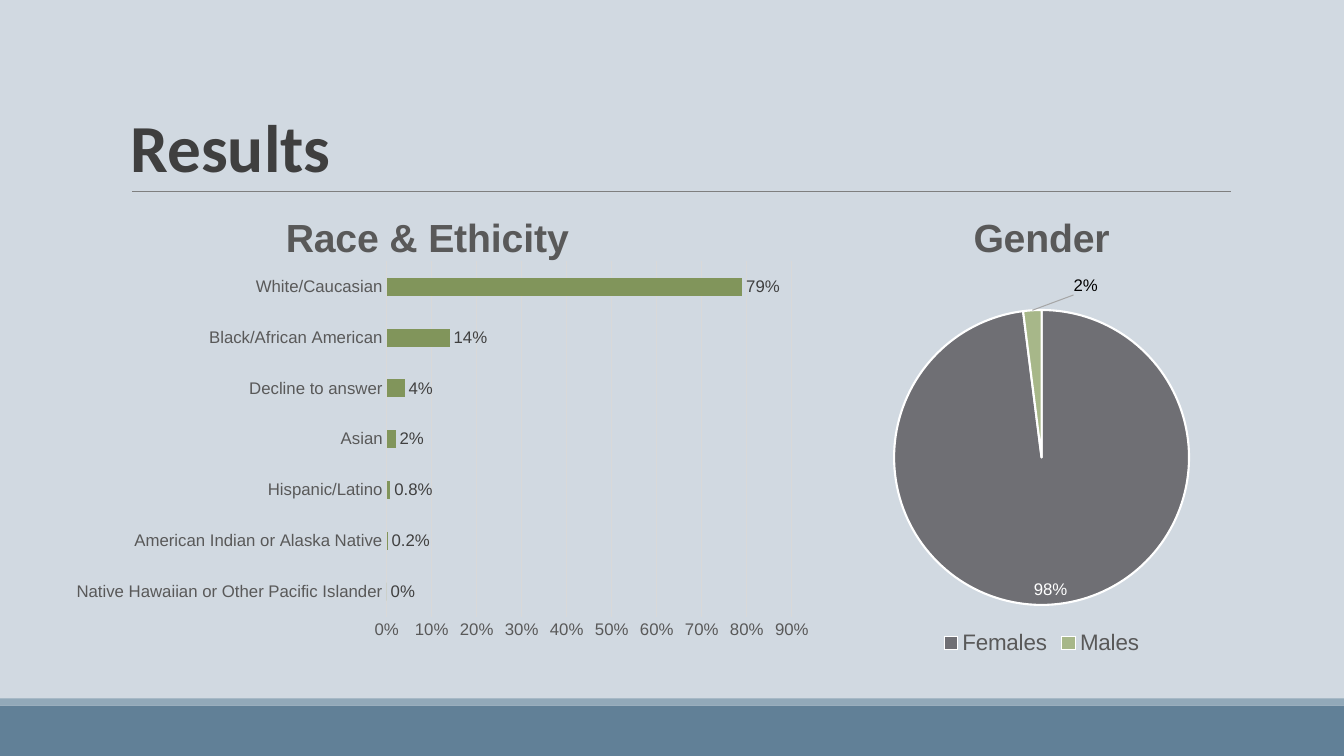
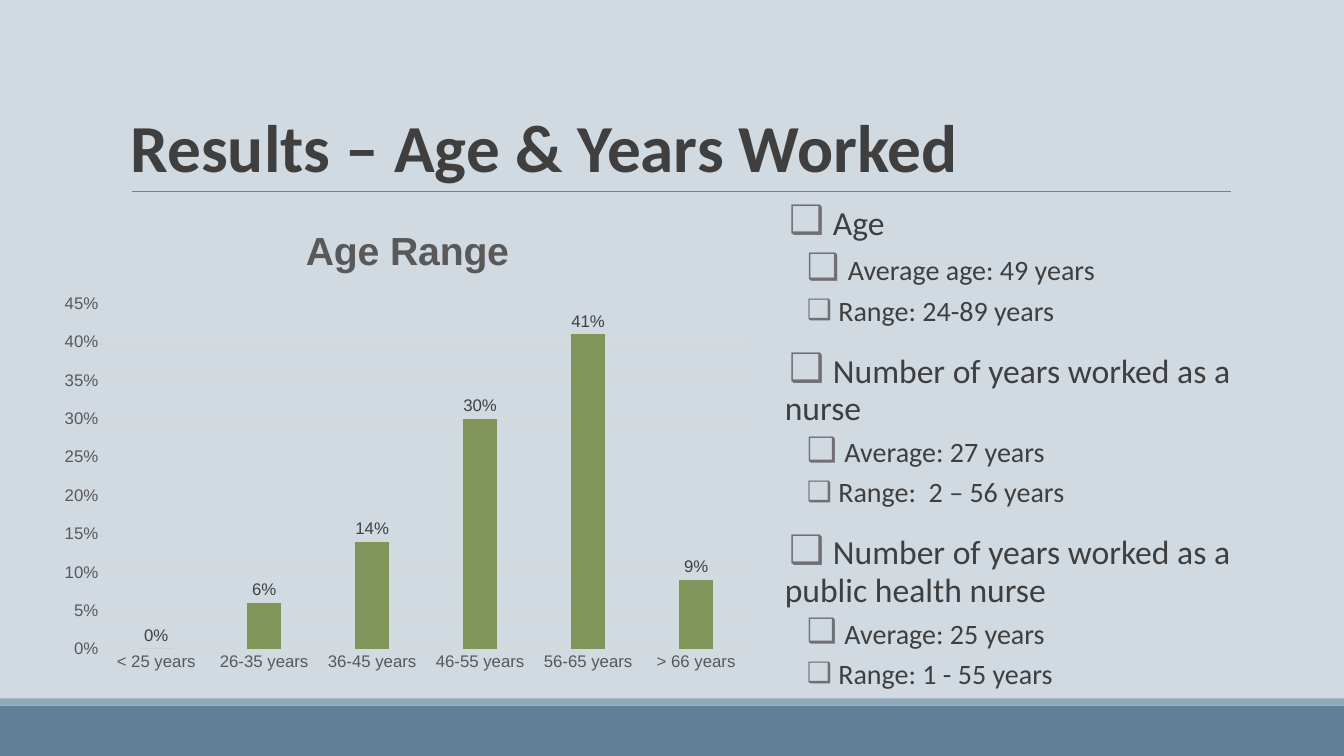
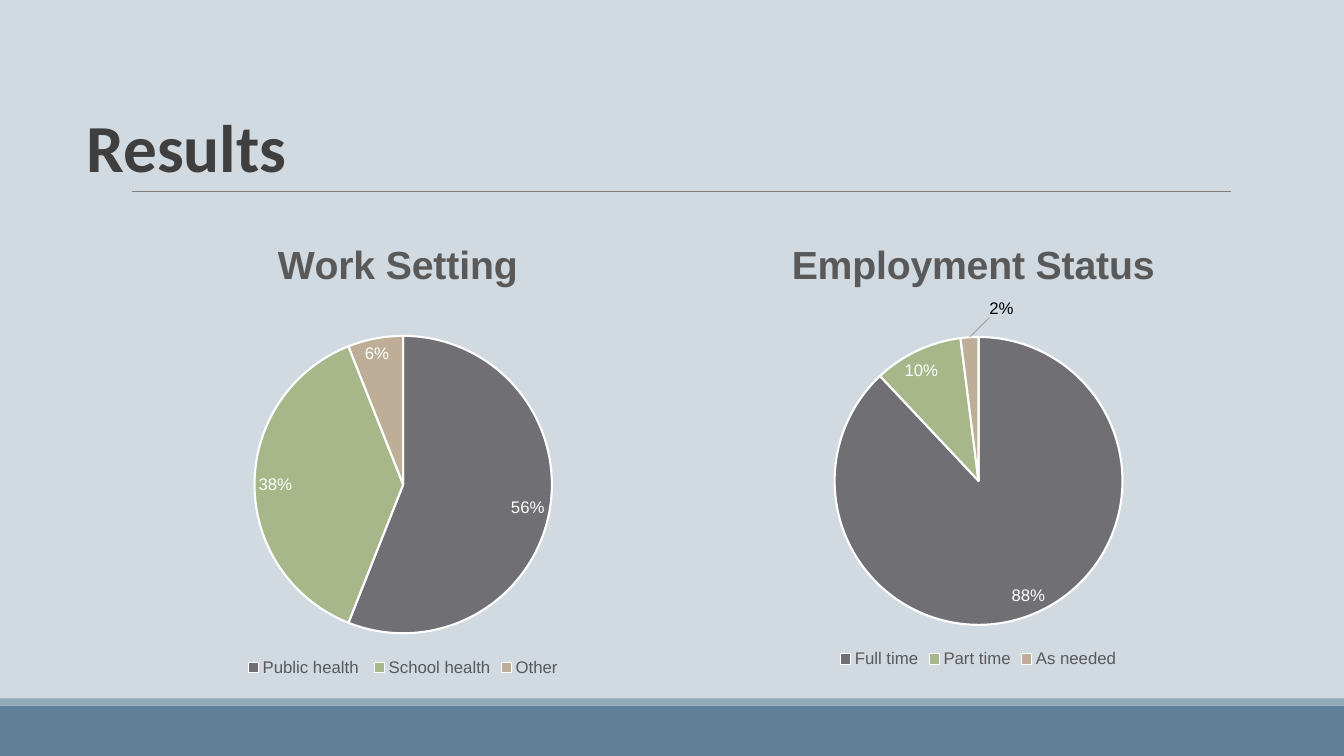
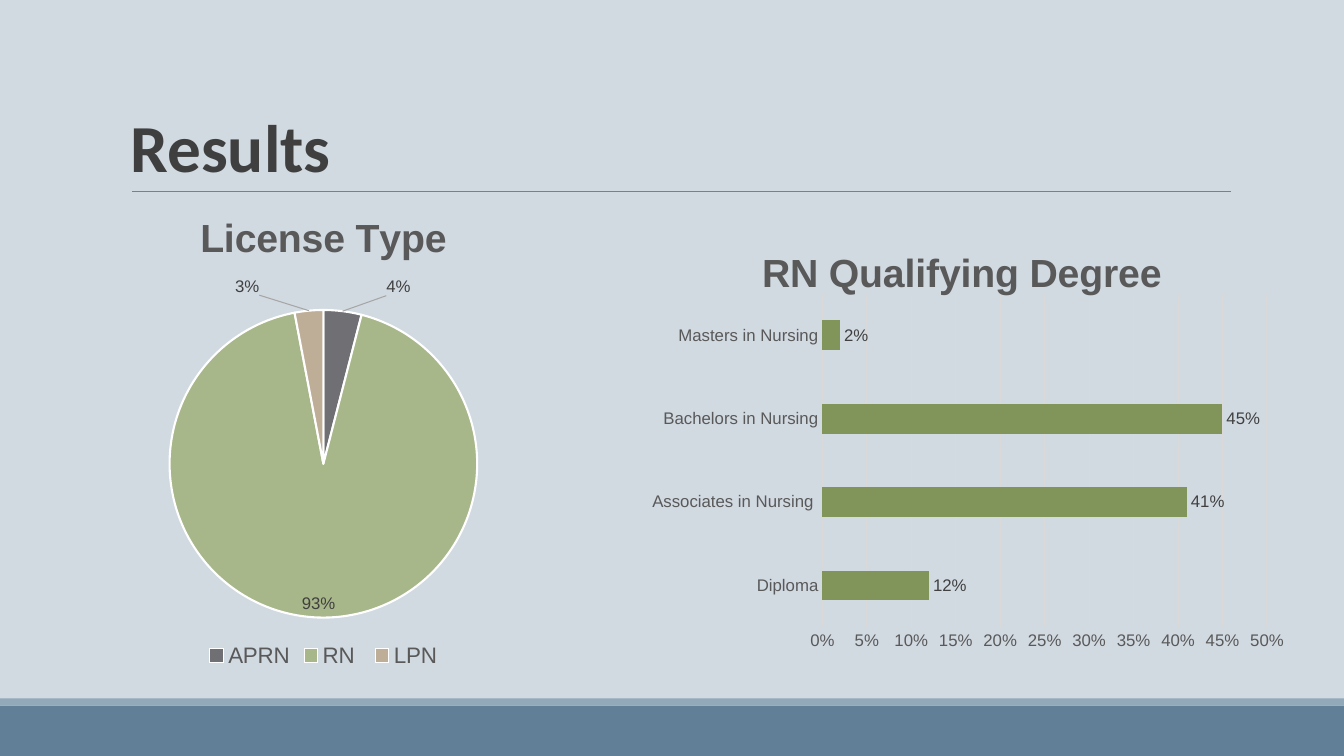
"""Build four survey result slides with charts and a bulleted summary."""
from lxml import etree
from pptx import Presentation, util as u
from pptx.chart import data as chart_data
from pptx.dml.color import RGBColor
from pptx.enum import chart as ch, shapes, text
from pptx.oxml import ns

COLORS = {
    "background": "D1D9E1", "band": "618097", "stripe": "92A9B9",
    "rule": "7F7F7F", "title": "3F3F3F", "bullet": "6F6F74",
    "chart_text": "595959", "label": "404040", "grid": "D9D9D9",
    "leader": "A6A6A6", "bar": "81955B", "white": "FFFFFF", "black": "000000",
}
SLICES = ["6F6F74", "A7B789", "BEAE98"]
CHART_FONT, TEXT_FONT = "Arial", "Calibri"
PERCENT = "0%"
SMALL_PERCENT = "[=0]0%;[<0.01]0.0%;0%"
LEVELS = [
    {"left": 10, "indent": 4, "before": 12, "after": 2},
    {"left": 40, "indent": -9, "before": 2, "after": 4},
]


def px(length):
    return u.Emu(length * 9525)


def box(*lengths):
    return [px(length) for length in lengths]


def rgb(name):
    return RGBColor.from_string(COLORS.get(name, name))


def paint(target, color):
    target.fill.solid()
    target.fill.fore_color.rgb = rgb(color)


def style_font(font, size, color, face=CHART_FONT, bold=False):
    font.size, font.name, font.bold = u.Pt(size), face, bold
    font.color.rgb = rgb(color)


def add_run(paragraph, words, size, bold=False):
    run = paragraph.add_run()
    run.text = words
    style_font(run.font, size, "title", TEXT_FONT, bold)


def add_band(slide, top, height, color):
    band = slide.shapes.add_shape(
        shapes.MSO_SHAPE.RECTANGLE, *box(0, top, 1280, height))
    band.shadow.inherit = False
    band.line.fill.background()
    paint(band, color)


def add_slide(prs, heading, left=115, width=1056):
    slide = prs.slides.add_slide(prs.slide_layouts[6])
    add_band(slide, 672, 48, "band")
    add_band(slide, 665, 7, "stripe")
    rule = slide.shapes.add_connector(
        shapes.MSO_CONNECTOR.STRAIGHT, *box(126, 182, 1172, 182))
    rule.line.color.rgb = rgb("rule")
    rule.line.width = u.Pt(0.75)
    etree.SubElement(rule.element.spPr, ns.qn("a:effectLst"))
    frame = slide.shapes.add_textbox(*box(left, 30, width, 152)).text_frame
    frame.word_wrap = True
    frame.vertical_anchor = text.MSO_ANCHOR.BOTTOM
    title = frame.paragraphs[0]
    title.line_spacing = 0.85
    add_run(title, heading, 48, bold=True)
    return slide


def add_bullets(slide, place, items):
    frame = slide.shapes.add_textbox(*box(*place)).text_frame
    frame.word_wrap = True
    frame.margin_top = frame.margin_bottom = u.Inches(0.1)
    for index, (level, lead_size, size, words) in enumerate(items):
        line = frame.add_paragraph() if index else frame.paragraphs[0]
        rule = LEVELS[level]
        props = line._p.get_or_add_pPr()
        props.set("marL", str(px(rule["left"])))
        props.set("indent", str(px(rule["indent"])))
        color = etree.SubElement(props, ns.qn("a:buClr"))
        etree.SubElement(color, ns.qn("a:srgbClr"), val=COLORS["bullet"])
        etree.SubElement(props, ns.qn("a:buFont"), typeface=TEXT_FONT)
        etree.SubElement(props, ns.qn("a:buChar"), char="❑")
        line.level = level
        line.line_spacing = 0.9
        line.space_before = u.Pt(rule["before"] if index else 0)
        line.space_after = u.Pt(rule["after"])
        add_run(line, " ", lead_size)
        add_run(line, words, size)


def manual_layout(**values):
    layout = etree.Element(ns.qn("c:layout"))
    manual = etree.SubElement(layout, ns.qn("c:manualLayout"))
    for tag, value in values.items():
        etree.SubElement(manual, ns.qn("c:" + tag), val=str(value))
    return layout


def add_chart(slide, kind, place, heading, values, label_color, position,
              number_format=PERCENT):
    source = chart_data.CategoryChartData(number_format=PERCENT)
    source.categories = list(values)
    source.add_series("Series 1", list(values.values()))
    chart = slide.shapes.add_chart(kind, *box(*place), source).chart
    style_font(chart.font, 10, "black")
    chart.has_title = True
    run = chart.chart_title.text_frame.paragraphs[0].add_run()
    run.text = heading
    style_font(run.font, 28, "chart_text", bold=True)
    labels = chart.plots[0].series[0].data_labels
    labels.show_value = True
    labels.number_format = number_format
    labels.number_format_is_linked = False
    labels.position = position
    style_font(labels.font, 12, label_color)
    return chart


def add_bars(slide, place, heading, values, top, step, kind="BAR_CLUSTERED",
             gap=182, overlap=0, plot_box=None, number_format=PERCENT):
    chart = add_chart(slide, ch.XL_CHART_TYPE[kind], place, heading, values,
                      "label", ch.XL_LABEL_POSITION.OUTSIDE_END, number_format)
    chart.has_legend = False
    plot = chart.plots[0]
    plot.vary_by_categories = False
    plot.gap_width, plot.overlap = gap, overlap
    paint(plot.series[0].format, "bar")
    for axis in (chart.category_axis, chart.value_axis):
        axis.major_tick_mark = axis.minor_tick_mark = ch.XL_TICK_MARK.NONE
        style_font(axis.tick_labels.font, 12, "chart_text")
    scale = chart.value_axis
    scale.minimum_scale, scale.maximum_scale, scale.major_unit = 0, top, step
    scale.tick_labels.number_format = PERCENT
    scale.tick_labels.number_format_is_linked = False
    scale.format.line.fill.background()
    scale.has_major_gridlines = True
    for line in (chart.category_axis.format.line,
                 scale.major_gridlines.format.line):
        line.color.rgb = rgb("grid")
        line.width = u.Pt(0.75)
    if plot_box:
        area = chart._chartSpace.chart.plotArea
        for old in area.findall(ns.qn("c:layout")):
            area.remove(old)
        area.insert(0, manual_layout(
            layoutTarget="inner", xMode="edge", yMode="edge",
            **dict(zip("xywh", plot_box))))


def add_pie(slide, place, heading, values, legend_size=12,
            label_color="white", callout_color="black", callouts=None):
    best_fit = ch.XL_LABEL_POSITION.BEST_FIT
    chart = add_chart(slide, ch.XL_CHART_TYPE.PIE, place, heading, values,
                      label_color, best_fit)
    chart.plots[0].vary_by_categories = True
    chart.has_legend = True
    chart.legend.position = ch.XL_LEGEND_POSITION.BOTTOM
    chart.legend.include_in_layout = False
    style_font(chart.legend.font, legend_size, "chart_text")
    series = chart.plots[0].series[0]
    for index, color in enumerate(SLICES[:len(values)]):
        piece = series.points[index].format
        paint(piece, color)
        piece.line.color.rgb = rgb("white")
        piece.line.width = u.Pt(1.5)
    for index, (right, down) in (callouts or {}).items():
        label = series.points[index].data_label
        style_font(label.font, 12, callout_color)
        label.position = best_fit
        label._dLbl.insert(1, manual_layout(x=right, y=down))
    leaders = etree.SubElement(series.data_labels._element,
                               ns.qn("c:leaderLines"))
    shape = etree.SubElement(leaders, ns.qn("c:spPr"))
    line = etree.SubElement(shape, ns.qn("a:ln"), w=str(u.Pt(0.75)))
    fill = etree.SubElement(line, ns.qn("a:solidFill"))
    etree.SubElement(fill, ns.qn("a:srgbClr"), val=COLORS["leader"])


def main():
    prs = Presentation()
    prs.slide_width, prs.slide_height = box(1280, 720)
    paint(prs.slide_master.background, "background")

    people = add_slide(prs, "Results")
    add_bars(people, (48, 182, 728, 446), "Race & Ethicity ", {
        "Native Hawaiian or Other Pacific Islander": 0,
        "American Indian or Alaska Native": 0.002,
        "Hispanic/Latino": 0.008,
        "Asian": 0.02,
        "Decline to answer": 0.04,
        "Black/African American": 0.14,
        "White/Caucasian": 0.79,
    }, 0.9, 0.1, plot_box=(0.44, 0.15, 0.53, 0.76),
        number_format=SMALL_PERCENT)
    add_pie(people, (736, 182, 512, 446), "Gender",
            {"Females": 0.98, "Males": 0.02}, legend_size=16,
            callouts={1: (0.1, -0.02)})

    ages = add_slide(prs, "Results – Age & Years Worked")
    add_bullets(ages, (728, 182, 518, 482), [
        (0, 28, 24, "Age"),
        (1, 26, 20, "Average age: 49 years"),
        (1, 20, 20, "Range: 24-89 years"),
        (0, 28, 24, "Number of years worked as a nurse"),
        (1, 24, 20, "Average: 27 years"),
        (1, 20, 20, "Range:  2 – 56 years"),
        (0, 28, 24, "Number of years worked as a public health nurse"),
        (1, 24, 20, "Average: 25 years"),
        (1, 20, 20, "Range: 1 - 55 years"),
    ])
    add_bars(ages, (48, 194, 680, 454), "Age Range", {
        "< 25 years": 0, "26-35 years": 0.06, "36-45 years": 0.14,
        "46-55 years": 0.3, "56-65 years": 0.41, "> 66 years": 0.09,
    }, 0.45, 0.05, kind="COLUMN_CLUSTERED", gap=219, overlap=-27)

    work = add_slide(prs, "Results", left=73, width=1154)
    add_pie(work, (56, 208, 656, 440), "Work Setting ",
            {"Public health ": 0.56, "School health": 0.38, "Other": 0.06})
    add_pie(work, (624, 208, 616, 432), "Employment Status ",
            {"Full time": 0.88, "Part time": 0.1, "As needed": 0.02},
            callouts={2: (0.05, -0.03)})

    training = add_slide(prs, "Results")
    add_pie(training, (16, 182, 584, 458), "License Type",
            {"APRN": 0.04, "RN ": 0.93, "LPN": 0.03}, legend_size=16,
            label_color="label", callout_color="label",
            callouts={0: (0.07, -0.02), 2: (-0.08, -0.02)})
    add_bars(training, (600, 216, 632, 424), "RN Qualifying Degree", {
        "Diploma": 0.12, "Associates in Nursing ": 0.41,
        "Bachelors in Nursing": 0.45, "Masters in Nursing": 0.02,
    }, 0.5, 0.05, plot_box=(0.29, 0.15, 0.67, 0.75))

    prs.save("out.pptx")


if __name__ == "__main__":
    main()
